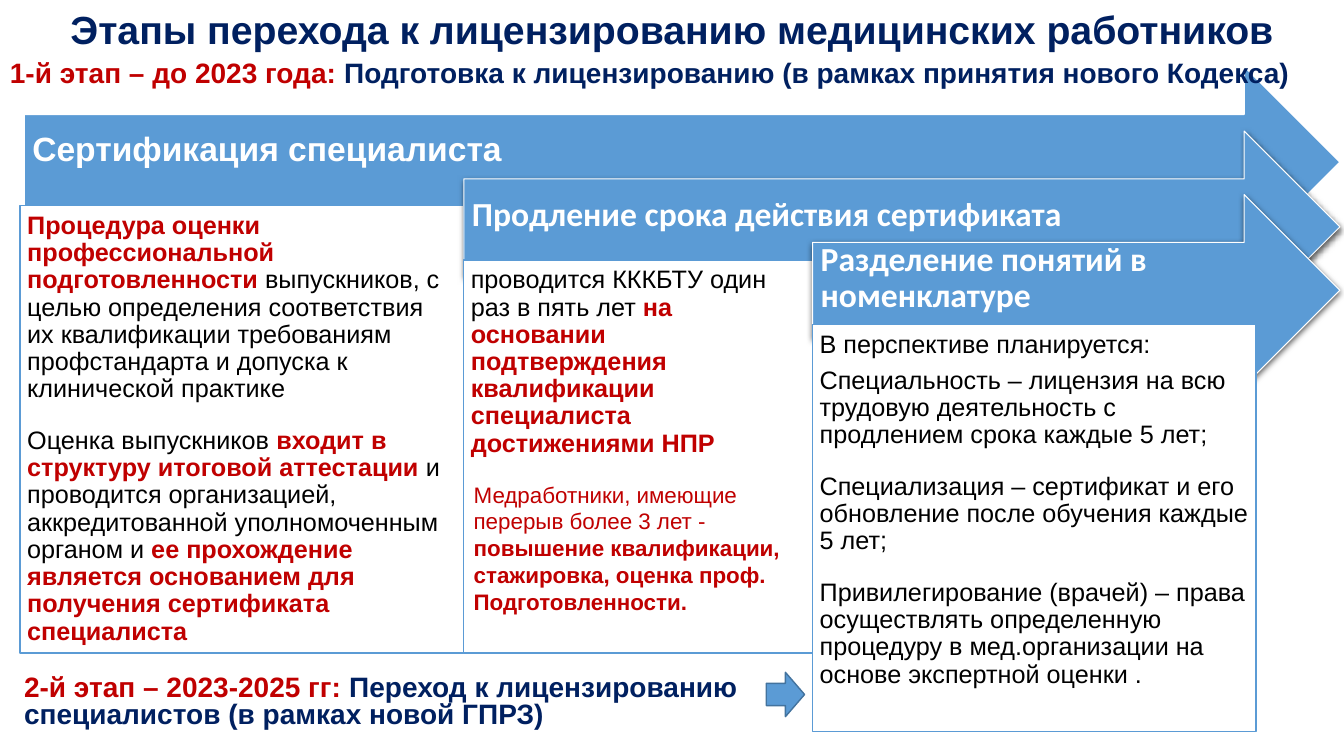
from lxml import etree
from pptx import Presentation
from pptx.dml.color import RGBColor
from pptx.enum import shapes, text
from pptx.oxml import ns
from pptx.util import Inches, Pt

HUES = {"blue": "5B9BD5", "edge": "43739E", "red": "C00000",
        "navy": "002060", "black": "000000", "white": "FFFFFF"}
RIGHT = 13.29

STEPS = [
    {"left": 0.24, "top": 0.66, "font": "Arial", "shade": False,
     "head": "Сертификация специалиста",
     "box": (0.2, 2.04, 4.4, 4.44),
     "body": [
         (0, "*Процедура оценки профессиональной подготовленности *выпускников, "
             "с целью определения соответствия их квалификации требованиям "
             "профстандарта и допуска к клинической практике"),
         (17.5, "Оценка выпускников *входит в структуру итоговой аттестации *и "
                "проводится организацией, аккредитованной уполномоченным органом и "
                "*ее прохождение является основанием для получения сертификата "
                "специалиста")]},
    {"left": 4.6, "top": 1.3, "font": "Calibri", "shade": True,
     "head": "Продление срока действия сертификата",
     "box": (4.6, 2.58, 3.46, 3.9),
     "body": [
         (0, "проводится КККБТУ один раз в пять лет *на основании подтверждения "
             "квалификации специалиста достижениями НПР")]},
    {"left": 8.06, "top": 1.93, "font": "Calibri", "shade": True,
     "head": "Разделение понятий в номенклатуре",
     "box": (8.06, 3.22, 4.4, 4.04),
     "body": [
         (0, "В перспективе планируется:"),
         (6, "Специальность – лицензия на всю трудовую деятельность с продлением "
             "срока каждые 5 лет;"),
         (17.5, "Специализация – сертификат и его обновление после обучения "
                "каждые 5 лет;"),
         (17.5, "Привилегирование (врачей) – права осуществлять определенную "
                "процедуру в мед.организации на основе экспертной оценки .")]},
]


def hue(name):
    return RGBColor.from_string(HUES[name])


def write(para, words, size, color, bold=False, font="Arial", lines=1.0):
    """Fill a paragraph; parts between asterisks become bold red."""
    para.font.size = Pt(size)
    para.font.name = font
    para.line_spacing = lines
    for i, part in enumerate(words.split("*")):
        if part:
            run = para.add_run()
            run.text = part
            run.font.bold = bold or i % 2 == 1
            run.font.color.rgb = hue("red" if i % 2 else color)


def inset(frame, left, top, right, bottom):
    frame.margin_left, frame.margin_top = Inches(left), Inches(top)
    frame.margin_right, frame.margin_bottom = Inches(right), Inches(bottom)


def add_form(slide, kind, box, fill, line, width=1):
    form = slide.shapes.add_shape(kind, *map(Inches, box))
    form.shadow.inherit = False
    form.fill.solid()
    form.fill.fore_color.rgb = hue(fill)
    form.line.color.rgb = hue(line)
    form.line.width = Pt(width)
    return form


def add_shade(form):
    """Cast a soft shadow straight down."""
    glow = form._element.spPr.find(ns.qn("a:effectLst"))
    cast = etree.SubElement(glow, ns.qn("a:outerShdw"), blurRad=str(Pt(4.5)),
                            dist=str(Pt(1.5)), dir="5400000", rotWithShape="0")
    tint = etree.SubElement(cast, ns.qn("a:srgbClr"), val=HUES["black"])
    etree.SubElement(tint, ns.qn("a:alpha"), val="63000")


def add_arrow(slide, step):
    box = (step["left"], step["top"], RIGHT - step["left"], 1.9)
    arrow = add_form(slide, shapes.MSO_SHAPE.RIGHT_ARROW, box, "blue", "white",
                     0.75 if step["shade"] else 1)
    if step["shade"]:
        add_shade(arrow)
    frame = arrow.text_frame
    frame.vertical_anchor = text.MSO_ANCHOR.MIDDLE
    inset(frame, 0.08, 0, 0.26, 0.23)
    para = frame.paragraphs[0]
    para.alignment = text.PP_ALIGN.LEFT
    write(para, step["head"], 24, "white", True, step["font"], 0.9)


def add_panel(slide, step):
    panel = add_form(slide, shapes.MSO_SHAPE.RECTANGLE, step["box"], "white", "blue")
    frame = panel.text_frame
    frame.vertical_anchor = text.MSO_ANCHOR.TOP
    inset(frame, *[0.07] * 4)
    for i, (gap, words) in enumerate(step["body"]):
        para = frame.add_paragraph() if i else frame.paragraphs[0]
        para.alignment = text.PP_ALIGN.LEFT
        para.space_before = Pt(gap)
        write(para, words, 18, "black", lines=0.9)


def add_note(slide, box, words, size, color, bold=False, lines=1.0):
    frame = slide.shapes.add_textbox(*map(Inches, box)).text_frame
    frame.word_wrap = True
    write(frame.paragraphs[0], words, size, color, bold, lines=lines)


def set_title(slide, words):
    title = slide.shapes.title
    title.left, title.top = Inches(0), Inches(0)
    title.width, title.height = Inches(13.33), Inches(0.57)
    title.text_frame.vertical_anchor = text.MSO_ANCHOR.MIDDLE
    para = title.text_frame.paragraphs[0]
    para.alignment = text.PP_ALIGN.CENTER
    write(para, words, 28, "navy", True)


def main():
    deck = Presentation()
    deck.slide_width, deck.slide_height = Inches(13.33), Inches(7.5)
    slide = deck.slides.add_slide(deck.slide_layouts.get_by_name("Title Only"))
    set_title(slide, "Этапы перехода к лицензированию медицинских работников")
    for step in STEPS:
        add_arrow(slide, step)
        add_panel(slide, step)
    add_note(slide, (0, 0.57, 13.14, 0.37),
             "*1-й этап – до 2023 года: *Подготовка к лицензированию "
             "(в рамках принятия нового Кодекса)", 20, "navy", True, 0.8)
    add_note(slide, (0.14, 6.66, 7.4, 0.64),
             "*2-й этап – 2023-2025 гг: *Переход к лицензированию специалистов "
             "(в рамках новой ГПРЗ)", 20, "navy", True, 0.8)
    add_form(slide, shapes.MSO_SHAPE.RIGHT_ARROW, (7.6, 6.67, 0.38, 0.44),
             "blue", "edge")
    add_note(slide, (4.6, 4.72, 3.46, 1.45),
             "Медработники, имеющие перерыв более 3 лет - *повышение "
             "квалификации, стажировка, оценка проф. Подготовленности.", 16, "red")
    deck.save("out.pptx")


if __name__ == "__main__":
    main()
